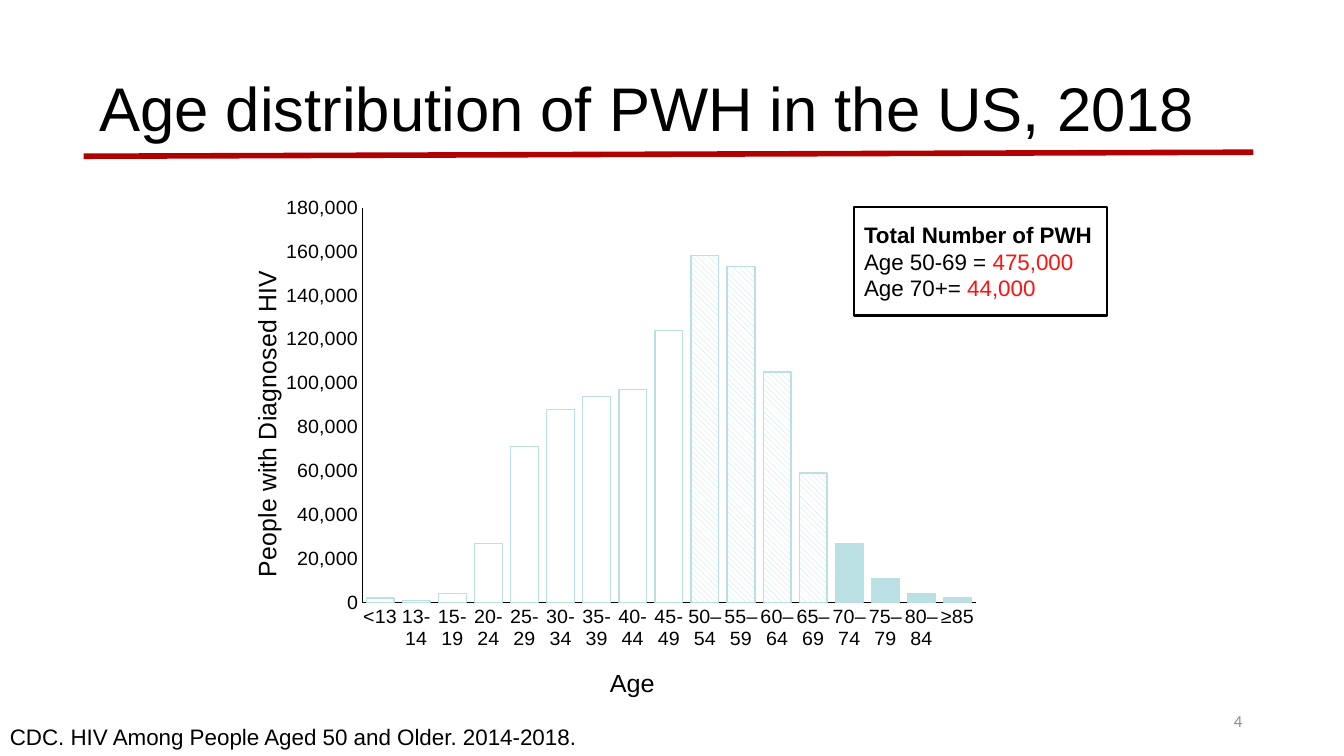
"""Build a slide showing the age distribution of people with HIV in the US."""
from lxml import etree
from pptx import Presentation
from pptx import util as u
from pptx.chart.data import CategoryChartData
from pptx.dml.color import RGBColor
from pptx.enum import chart as charts, dml, shapes, text
from pptx.oxml.ns import qn

theme = {
    "font": "Arial", "number_font": "Calibri",
    "ink": "000000", "paper": "FFFFFF", "rule": "B00000",
    "bar": "BBE0E3", "accent": "FF1111", "muted": "8C8C8C",
    "title": 44, "axis_title": 18, "body": 16, "label": 14, "number": 12,
}

deck = Presentation()
deck.slide_width, deck.slide_height = u.Inches(13.33), u.Inches(7.5)
column, row = deck.slide_width / 40, deck.slide_height / 30
page = deck.slides.add_slide(deck.slide_layouts[5])


def grid(left, top, width, height):
    return [int(n * step) for n, step in zip((left, top, width, height), (column, row) * 2)]


def style(font, size, color="ink", face="font", bold=False):
    for name, value in {"size": u.Pt(theme[size]), "name": theme[face], "bold": bold}.items():
        setattr(font, name, value)
    font.color.rgb = RGBColor.from_string(theme[color])


title = page.shapes.title
title.left, title.top, title.width, title.height = grid(1.02, 2.56, 36.52, 5.64)
callout = page.shapes.add_shape(shapes.MSO_SHAPE.RECTANGLE, *grid(25.42, 8.2, 7.53, 4.32))
callout.shadow.inherit = False
callout.fill.background()
callout.line.color.rgb = RGBColor.from_string(theme["ink"])
callout.line.width = u.Pt(1.5)
source = page.shapes.add_textbox(*grid(0, 28.52, 18.16, 1.48))
number = page.shapes.add_textbox(*grid(28.27, 27.8, 9, 1.6))

left, center, right = text.PP_ALIGN.LEFT, text.PP_ALIGN.CENTER, text.PP_ALIGN.RIGHT
top, middle = text.MSO_ANCHOR.TOP, text.MSO_ANCHOR.MIDDLE
plain = {"size": "body"}
accent = {"size": "body", "color": "accent"}
texts = [
    (title, center, top, [[("Age distribution of PWH in the US, 2018", {"size": "title"})]]),
    (callout, left, middle, [
        [("Total Number of PWH", {"size": "body", "bold": True})],
        [("Age 50-69 = ", plain), ("475,000", accent)],
        [("Age 70+= ", plain), ("44,000", accent)],
    ]),
    (source, left, top, [[("CDC. HIV Among People Aged 50 and Older. 2014-2018.", plain)]]),
    (number, right, middle, [
        [("4", {"size": "number", "color": "muted", "face": "number_font"})],
    ]),
]
for box, alignment, anchor, lines in texts:
    frame = box.text_frame
    frame.word_wrap, frame.vertical_anchor = True, anchor
    for index, spans in enumerate(lines):
        para = frame.add_paragraph() if index else frame.paragraphs[0]
        para.alignment = alignment
        for words, look in spans:
            span = para.add_run()
            span.text = words
            style(span.font, **look)

rule = page.shapes.add_connector(
    shapes.MSO_CONNECTOR.STRAIGHT, *grid(2.49, 6.2, 37.3, 6.04))
rule.line.color.rgb = RGBColor.from_string(theme["rule"])
rule.line.width = u.Pt(4)
etree.SubElement(rule.element.spPr, qn("a:effectLst"))

data = CategoryChartData(number_format="#,##0")
data.categories = [
    "<13", "13-14", "15-19", "20-24", "25-29", "30-34", "35-39", "40-44", "45-49",
    "50–54", "55–59", "60–64", "65–69", "70–74", "75–79", "80–84", "≥85"]
thousands = [2, 1, 4, 27, 71, 88, 94, 97, 124, 158, 153, 105, 59, 27, 11, 4, 2]
data.add_series("Series 1", [count * 1000 for count in thousands])
chart = page.shapes.add_chart(
    charts.XL_CHART_TYPE.COLUMN_CLUSTERED, *grid(7.08, 6.04, 23.26, 21.96), data).chart
chart.has_title = chart.has_legend = False
style(chart.font, "label")

plot = chart.plots[0]
plot.gap_width, plot.vary_by_categories = 30, False
series = plot.series[0]
bar_color = RGBColor.from_string(theme["bar"])
middle_ages, oldest_ages = 9, 13
for index in range(len(thousands)):
    look = series.points[index].format
    look.line.color.rgb, look.line.width = bar_color, u.Pt(1)
    if index < middle_ages:
        look.fill.background()
    elif index < oldest_ages:
        look.fill.patterned()
        look.fill.pattern = dml.MSO_PATTERN.WIDE_DOWNWARD_DIAGONAL
        look.fill.fore_color.rgb = bar_color
        look.fill.back_color.rgb = RGBColor.from_string(theme["paper"])
    else:
        look.fill.solid()
        look.fill.fore_color.rgb = bar_color

ages, people = chart.category_axis, chart.value_axis
for axis, words in ((ages, "Age"), (people, "People with Diagnosed HIV")):
    axis.has_major_gridlines = False
    axis.major_tick_mark = axis.minor_tick_mark = charts.XL_TICK_MARK.NONE
    axis.format.line.color.rgb = RGBColor.from_string(theme["ink"])
    axis.format.line.width = u.Pt(0.75)
    style(axis.tick_labels.font, "label")
    span = axis.axis_title.text_frame.paragraphs[0].add_run()
    span.text = words
    style(span.font, "axis_title")
for name, value in {"minimum_scale": 0, "maximum_scale": 180000, "major_unit": 20000}.items():
    setattr(people, name, value)
people.tick_labels.number_format = "#,##0"
people.tick_labels.number_format_is_linked = False

area = chart.element.find(".//" + qn("c:plotArea"))
age_title, people_title = area.iter(qn("c:title"))
edges = {"xMode": "edge", "yMode": "edge"}
layouts = [
    (area, 0, {"layoutTarget": "inner", **edges, "x": 0.159, "y": 0.102, "w": 0.785, "h": 0.727}),
    (age_title, 1, {**edges, "x": 0.47, "y": 0.94}),
    (people_title, 1, {**edges, "x": 0.01, "y": 0.22}),
]
for parent, position, values in layouts:
    for former in parent.findall(qn("c:layout")):
        parent.remove(former)
    layout = etree.Element(qn("c:layout"))
    manual = etree.SubElement(layout, qn("c:manualLayout"))
    for name, value in values.items():
        etree.SubElement(manual, qn("c:" + name)).set("val", str(value))
    parent.insert(position, layout)

deck.save("out.pptx")
